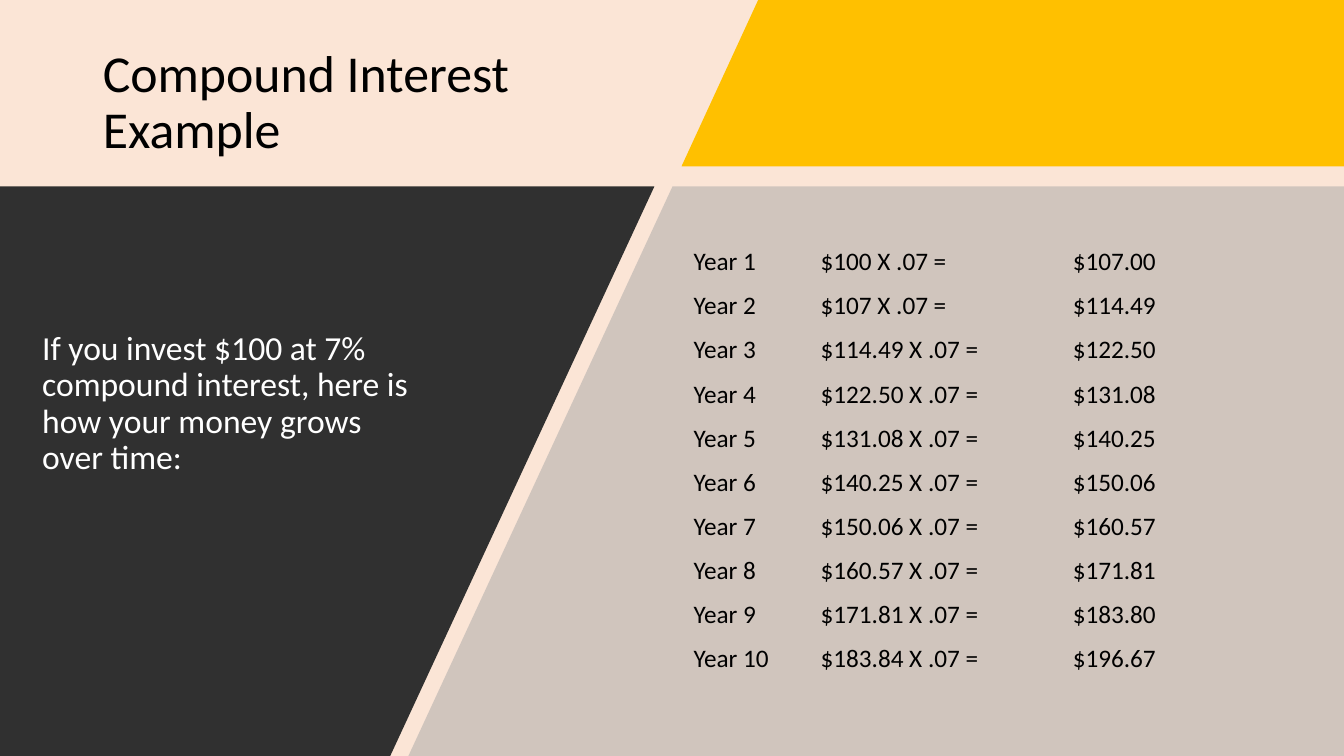
"""Build the compound interest example slide."""
from lxml import etree
from pptx import Presentation
from pptx.dml.color import RGBColor
from pptx.enum.text import MSO_ANCHOR, PP_ALIGN
from pptx.oxml.ns import qn
from pptx.util import Inches, Pt

COLORS = {
    "peach": "FBE5D6",
    "gold": "FFC000",
    "gray": "A6A6A6",
    "charcoal": "303030",
    "black": "000000",
    "white": "FFFFFF",
}
FONT = "Calibri"
NO_STYLE_NO_GRID = "{2D5ABB26-0587-4C30-8999-92F81FD0307C}"


def add_panel(page, points, color):
    corners = [(Inches(x), Inches(y)) for x, y in points]
    builder = page.shapes.build_freeform(*corners[0])
    builder.add_line_segments(corners[1:], close=True)
    panel = builder.convert_to_shape()
    panel.shadow.inherit = False
    panel.fill.solid()
    panel.fill.fore_color.rgb = RGBColor.from_string(COLORS[color])
    panel.line.fill.background()
    return panel


def add_span(para, text, size, color):
    span = para.add_run()
    span.text = text
    span.font.name = FONT
    span.font.size = Pt(size)
    span.font.color.rgb = RGBColor.from_string(COLORS[color])


deck = Presentation()
deck.slide_width = Inches(13.33)
deck.slide_height = Inches(7.5)
page = deck.slides.add_slide(deck.slide_layouts[5])
page.background.fill.solid()
page.background.fill.fore_color.rgb = RGBColor.from_string(COLORS["peach"])

title = page.shapes.title
title.left, title.top = Inches(0.92), Inches(0.4)
title.width, title.height = Inches(5.84), Inches(1.25)
title.text_frame.word_wrap = True
title.text_frame.vertical_anchor = MSO_ANCHOR.MIDDLE
para = title.text_frame.paragraphs[0]
para.alignment = PP_ALIGN.LEFT
para.line_spacing = 0.9
add_span(para, "Compound Interest Example", 37, "black")

add_panel(page, [(7.52, 0), (13.33, 0), (13.33, 1.65), (6.76, 1.65)], "gold")
table_panel = add_panel(
    page, [(6.67, 1.85), (13.33, 1.85), (13.33, 7.5), (4.05, 7.5)], "gray")
gray_fill = next(table_panel.element.iter(qn("a:srgbClr")))
etree.SubElement(gray_fill, qn("a:alpha")).set("val", "50000")
add_panel(page, [(0, 1.85), (6.49, 1.85), (3.87, 7.5), (0, 7.5)], "charcoal")

box = page.shapes.add_textbox(Inches(0.32), Inches(2.24), Inches(3.94), Inches(3.98))
frame = box.text_frame
frame.word_wrap = True
frame.vertical_anchor = MSO_ANCHOR.MIDDLE
frame.margin_bottom = Inches(0.49)
para = frame.paragraphs[0]
para.line_spacing = 0.9
para.space_before = Pt(10)
add_span(para, "If you invest $100 at 7% compound interest, "
         "here is how your money grows over time:", 24, "white")

balances = [
    ("$100", "$107.00"),
    ("$107", "$114.49"),
    ("$114.49", "$122.50"),
    ("$122.50", "$131.08"),
    ("$131.08", "$140.25"),
    ("$140.25", "$150.06"),
    ("$150.06", "$160.57"),
    ("$160.57", "$171.81"),
    ("$171.81", "$183.80"),
    ("$183.84", "$196.67"),
]
growth = page.shapes.add_table(
    len(balances), 3, Inches(6.78), Inches(2.38), Inches(5.62), Inches(4.38))
next(growth.element.iter(qn("a:tableStyleId"))).text = NO_STYLE_NO_GRID
table = growth.table
table.first_row = False
table.horz_banding = False
for column, width in zip(table.columns, (1.26, 2.5, 1.86)):
    column.width = Inches(width)
for year, (row, (start, end)) in enumerate(zip(table.rows, balances), 1):
    for cell, text in zip(row.cells, (f"Year {year}", f"{start} X .07 =", end)):
        cell.fill.background()
        cell.vertical_anchor = MSO_ANCHOR.MIDDLE
        add_span(cell.text_frame.paragraphs[0], text, 18, "black")

deck.save("out.pptx")
